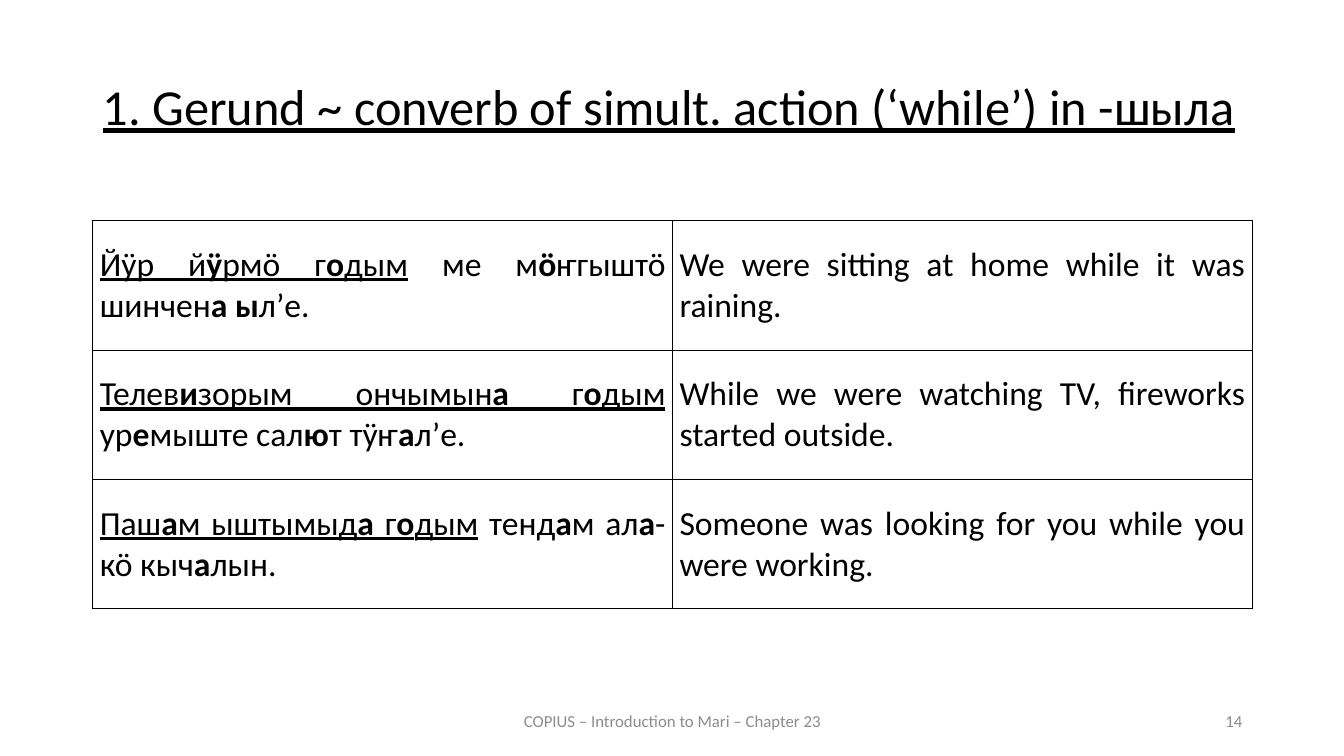
from dataclasses import dataclass
from itertools import groupby

from lxml import etree
from pptx import Presentation
from pptx.dml.color import RGBColor
from pptx.enum.text import MSO_ANCHOR, MSO_AUTO_SIZE, PP_ALIGN
from pptx.oxml.ns import qn
from pptx.util import Inches, Pt

TITLE_ONLY = 5
TOP, MIDDLE = MSO_ANCHOR.TOP, MSO_ANCHOR.MIDDLE
JUSTIFY, CENTER, RIGHT = PP_ALIGN.JUSTIFY, PP_ALIGN.CENTER, PP_ALIGN.RIGHT
NO_AUTOFIT = MSO_AUTO_SIZE.NONE


@dataclass(frozen=True)
class Theme:
    font: str = "Calibri"
    ink: str = "000000"
    muted: str = "8C8C8C"
    title_size: int = 36
    table_size: int = 24
    footer_size: int = 12
    border_width: int = 1


@dataclass(frozen=True)
class Box:
    left: float
    top: float
    width: float
    height: float

    def lengths(self):
        return [Inches(value) for value in (self.left, self.top, self.width, self.height)]


@dataclass(frozen=True)
class Example:
    mari: str
    english: str


@dataclass(frozen=True)
class FooterItem:
    text: str
    box: Box
    alignment: PP_ALIGN


THEME = Theme()
SLIDE_WIDTH, SLIDE_HEIGHT = 13.33, 7.5
MARGIN, CONTENT_WIDTH = 0.92, 11.5
FOOTER_TOP, FOOTER_HEIGHT = 6.95, 0.4

TITLE = "1. Gerund ~ converb of simult. action (‘while’) in -шыла"
TITLE_BOX = Box(MARGIN, 0.76, CONTENT_WIDTH, 0.83)
TABLE_BOX = Box(MARGIN, 2.19, CONTENT_WIDTH, 3.85)

# Underscores enclose underlined text, asterisks enclose bold text
EXAMPLES = [
    Example("_Йӱр й*ӱ*рмӧ г*о*дым_ ме м*ӧ*ҥгыштӧ шинчен*а ы*л’е.",
            "We were sitting at home while it was raining."),
    Example("_Телев*и*зорым ончымын*а* г*о*дым_ ур*е*мыште сал*ю*т тӱҥ*а*л’е.",
            "While we were watching TV, fireworks started outside."),
    Example("_Паш*а*м ыштымыд*а* г*о*дым_ тенд*а*м ал*а*-кӧ кыч*а*лын.",
            "Someone was looking for you while you were working."),
]

FOOTER = [
    FooterItem("COPIUS – Introduction to Mari – Chapter 23",
               Box(4.42, FOOTER_TOP, 4.5, FOOTER_HEIGHT), CENTER),
    FooterItem("14", Box(9.42, FOOTER_TOP, 3, FOOTER_HEIGHT), RIGHT),
]


def apply(target, values: dict) -> None:
    for name, value in values.items():
        setattr(target, name, value)


def write(paragraph, marked_text: str, size: int, color: str, alignment: PP_ALIGN) -> None:
    """Write text as runs, turning its marks into bold and underline."""
    paragraph.alignment = alignment
    bold = underline = False
    for is_mark, group in groupby(marked_text, key=lambda letter: letter in "_*"):
        letters = "".join(group)
        if is_mark:
            bold ^= letters.count("*") % 2 == 1
            underline ^= letters.count("_") % 2 == 1
            continue
        run = paragraph.add_run()
        run.text = letters
        apply(run.font, {"name": THEME.font, "size": Pt(size),
                         "bold": bold, "underline": underline})
        run.font.color.rgb = RGBColor.from_string(color)


def add_borders(cell) -> None:
    properties = cell._tc.get_or_add_tcPr()
    for index, side in enumerate(("lnL", "lnR", "lnT", "lnB")):
        line = etree.Element(qn(f"a:{side}"), w=str(Pt(THEME.border_width)))
        fill = etree.SubElement(line, qn("a:solidFill"))
        etree.SubElement(fill, qn("a:srgbClr"), val=THEME.ink)
        properties.insert(index, line)


def add_title(slide) -> None:
    title = slide.shapes.title
    apply(title, dict(zip(("left", "top", "width", "height"), TITLE_BOX.lengths())))
    apply(title.text_frame, {"word_wrap": True, "auto_size": NO_AUTOFIT,
                             "vertical_anchor": TOP})
    paragraph = title.text_frame.paragraphs[0]
    apply(paragraph, {"line_spacing": 0.9, "space_before": Pt(12)})
    write(paragraph, f"_{TITLE}_", THEME.title_size, THEME.ink, JUSTIFY)


def add_examples(slide) -> None:
    shape = slide.shapes.add_table(len(EXAMPLES), 2, *TABLE_BOX.lengths())
    table = shape.table
    apply(table, {"first_row": False, "horz_banding": False})
    for row, example in enumerate(EXAMPLES):
        for column, text in enumerate((example.mari, example.english)):
            cell = table.cell(row, column)
            apply(cell, {"vertical_anchor": MIDDLE, "margin_top": 0, "margin_bottom": 0,
                         "margin_left": Inches(0.07), "margin_right": Inches(0.07)})
            cell.fill.background()
            add_borders(cell)
            write(cell.text_frame.paragraphs[0], text, THEME.table_size, THEME.ink, JUSTIFY)


def add_footer_item(slide, item: FooterItem) -> None:
    frame = slide.shapes.add_textbox(*item.box.lengths()).text_frame
    apply(frame, {"word_wrap": True, "vertical_anchor": MIDDLE})
    write(frame.paragraphs[0], item.text, THEME.footer_size, THEME.muted, item.alignment)


def main() -> None:
    presentation = Presentation()
    apply(presentation, {"slide_width": Inches(SLIDE_WIDTH),
                         "slide_height": Inches(SLIDE_HEIGHT)})
    slide = presentation.slides.add_slide(presentation.slide_layouts[TITLE_ONLY])

    # Heading
    add_title(slide)

    # Sentences in Mari with their translations
    add_examples(slide)

    # Course name and page number
    for item in FOOTER:
        add_footer_item(slide, item)

    presentation.save("out.pptx")


if __name__ == "__main__":
    main()
